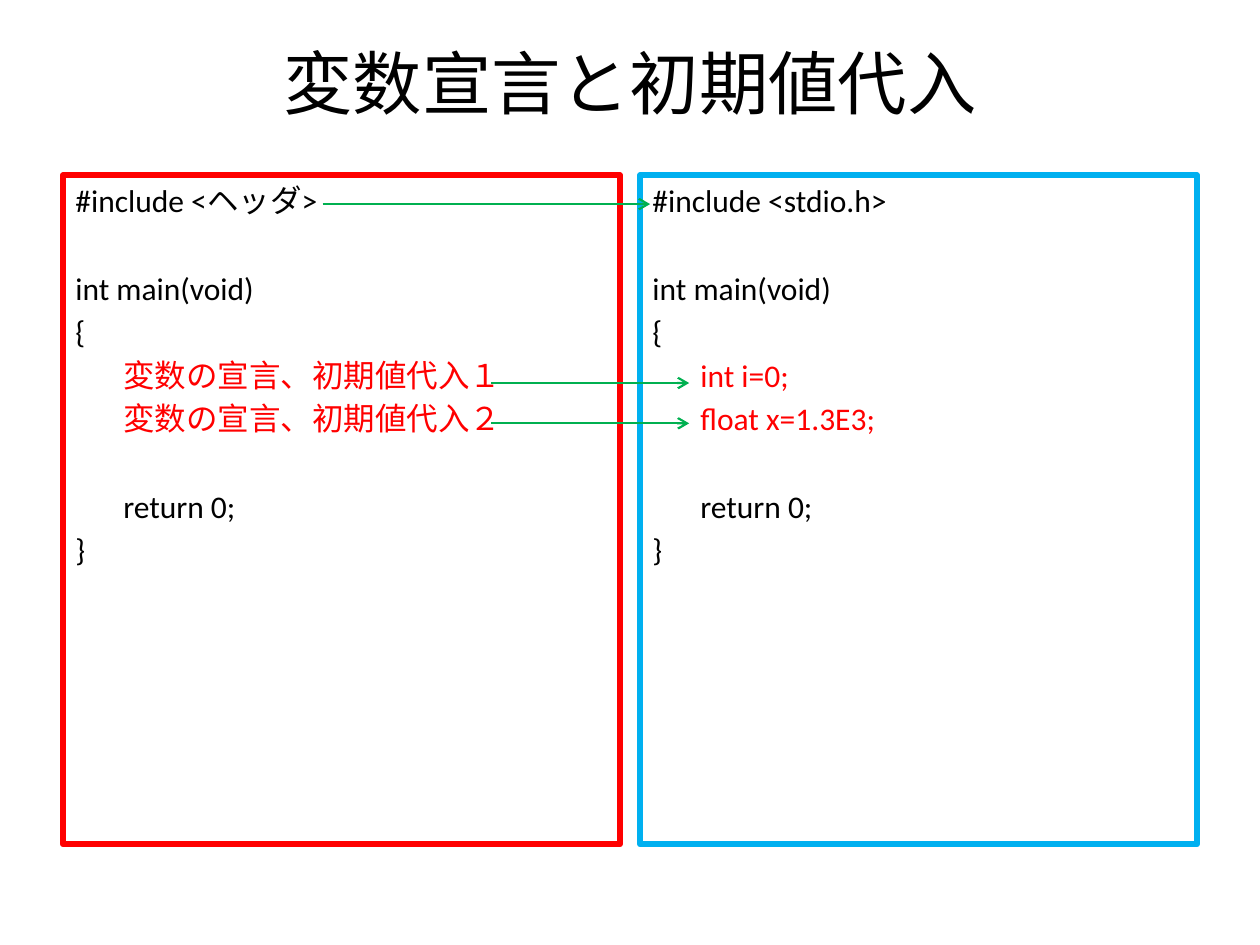
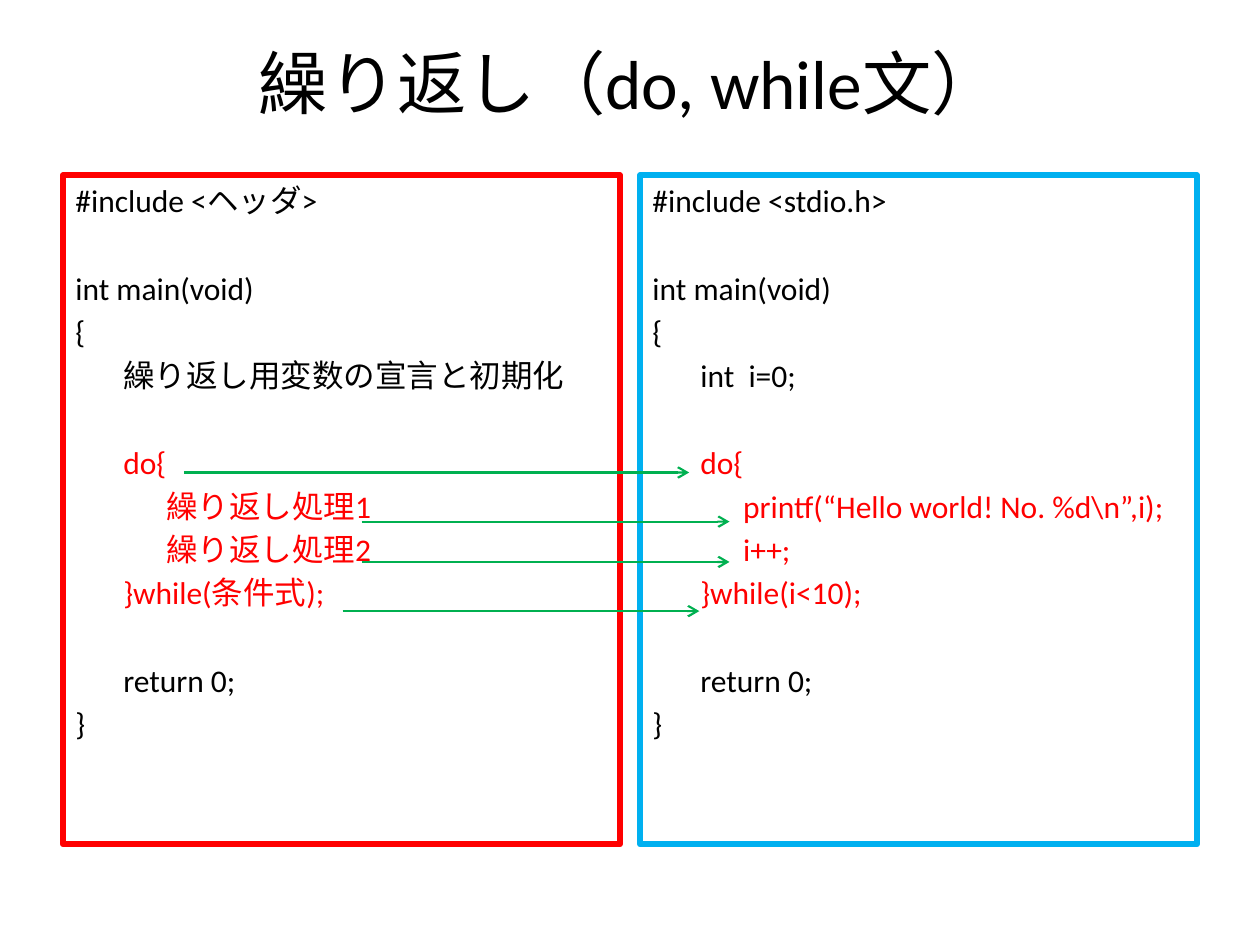
from dataclasses import dataclass

from lxml import etree
from pptx import Presentation
from pptx.dml.color import RGBColor
from pptx.enum import shapes, text
from pptx.oxml import ns
from pptx.util import Inches, Pt

BLANK = None
HEADER = [(0, "int main(void)"), (0, "{")]
FOOTER = [BLANK, (1, "return 0;"), (0, "}")]
TEMPLATE_START = [(0, "#include <ヘッダ>"), BLANK, *HEADER]
EXAMPLE_START = [(0, "#include <stdio.h>"), BLANK, *HEADER]

SLIDES = [
    {
        "title": "変数宣言と初期値代入",
        "template": [
            (1, "変数の宣言、初期値代入１", "key"),
            (1, "変数の宣言、初期値代入２", "key"),
        ],
        "example": [
            (1, "int i=0;", "key"),
            (1, "float x=1.3E3;", "key"),
        ],
        "arrows": [(3.9, 5.47, 3.04), (2.56, 5.16, 1.62), (3.9, 5.47, 3.36)],
    },
    {
        "title": "繰り返し（do, while文）",
        "template": [
            (1, "繰り返し用変数の宣言と初期化"),
            BLANK,
            (1, "do{", "key"),
            (2, "繰り返し処理1", "key"),
            (2, "繰り返し処理2", "key"),
            (1, "}while(条件式);", "key"),
        ],
        "example": [
            (1, "int  i=0;"),
            BLANK,
            (1, "do{", "key"),
            (2, "printf(“Hello world! No. %d\\n”,i);", "key"),
            (2, "i++;", "key"),
            (1, "}while(i<10);", "key"),
        ],
        "arrows": [(2.87, 5.79, 4.14), (1.46, 5.47, 3.75),
                   (2.87, 5.79, 4.46), (2.72, 5.55, 4.85)],
    },
]


@dataclass(frozen=True)
class Theme:
    font: str = "Calibri"
    ink: RGBColor = RGBColor(0x00, 0x00, 0x00)
    key: RGBColor = RGBColor(0xFF, 0x00, 0x00)
    template: RGBColor = RGBColor(0xFF, 0x00, 0x00)
    example: RGBColor = RGBColor(0x00, 0xB0, 0xF0)
    arrow: RGBColor = RGBColor(0x00, 0xB0, 0x50)
    title_size: float = 39.6
    code_size: float = 18
    code_gap: float = 3.2
    code_line: float = 22
    panel_line: float = 3.5
    arrow_line: float = 1.25


THEME = Theme()
SLIDE_WIDTH, SLIDE_HEIGHT = 10, 7.5
MARGIN, PANEL_GAP = 0.5, 0.16
PANEL_TOP, PANEL_HEIGHT = 1.39, 5.31
PANEL_WIDTH = (SLIDE_WIDTH - 2 * MARGIN - PANEL_GAP) / 2
INDENTS = [0, 0.38, 0.72]


def style_font(paragraph, size, color):
    paragraph.font.name = THEME.font
    paragraph.font.size = Pt(size)
    paragraph.font.color.rgb = color


def add_title(slide, title):
    box = slide.shapes.add_textbox(Inches(MARGIN), Inches(0.3),
                                   Inches(SLIDE_WIDTH - 2 * MARGIN), Inches(0.69))
    box.text_frame.word_wrap = True
    box.text_frame.vertical_anchor = text.MSO_ANCHOR.MIDDLE
    paragraph = box.text_frame.paragraphs[0]
    paragraph.text = title
    paragraph.alignment = text.PP_ALIGN.CENTER
    style_font(paragraph, THEME.title_size, THEME.ink)


def write_code(frame, lines):
    paragraph = frame.paragraphs[0]
    space = THEME.code_gap
    for number, line in enumerate(lines):
        if line is BLANK:
            space += THEME.code_line + THEME.code_gap
            continue
        level, words, *marks = line
        if number:
            paragraph = frame.add_paragraph()
        paragraph.text = words
        paragraph.alignment = text.PP_ALIGN.LEFT
        paragraph.space_before = Pt(space)
        paragraph._p.get_or_add_pPr().set("marL", str(Inches(INDENTS[level])))
        style_font(paragraph, THEME.code_size, THEME.key if marks else THEME.ink)
        space = THEME.code_gap


def add_panel(slide, column, color, lines):
    left = MARGIN + column * (PANEL_WIDTH + PANEL_GAP)
    panel = slide.shapes.add_shape(shapes.MSO_SHAPE.RECTANGLE, Inches(left), Inches(PANEL_TOP),
                                   Inches(PANEL_WIDTH), Inches(PANEL_HEIGHT))
    panel.shadow.inherit = False
    panel.fill.background()
    panel.line.color.rgb = color
    panel.line.width = Pt(THEME.panel_line)
    panel.text_frame.word_wrap = True
    panel.text_frame.vertical_anchor = text.MSO_ANCHOR.TOP
    write_code(panel.text_frame, lines)


def add_arrow(slide, start, end, height):
    arrow = slide.shapes.add_connector(shapes.MSO_CONNECTOR.STRAIGHT, Inches(start),
                                       Inches(height), Inches(end), Inches(height))
    arrow.line.color.rgb = THEME.arrow
    arrow.line.width = Pt(THEME.arrow_line)
    etree.SubElement(arrow.line._get_or_add_ln(), ns.qn("a:tailEnd"), type="arrow")
    etree.SubElement(arrow._element.spPr, ns.qn("a:effectLst"))


def main():
    presentation = Presentation()
    presentation.slide_width = Inches(SLIDE_WIDTH)
    presentation.slide_height = Inches(SLIDE_HEIGHT)
    for content in SLIDES:
        slide = presentation.slides.add_slide(presentation.slide_layouts[6])
        add_title(slide, content["title"])
        add_panel(slide, 0, THEME.template, TEMPLATE_START + content["template"] + FOOTER)
        add_panel(slide, 1, THEME.example, EXAMPLE_START + content["example"] + FOOTER)
        for arrow in content["arrows"]:
            add_arrow(slide, *arrow)
    presentation.save("out.pptx")


if __name__ == "__main__":
    main()
